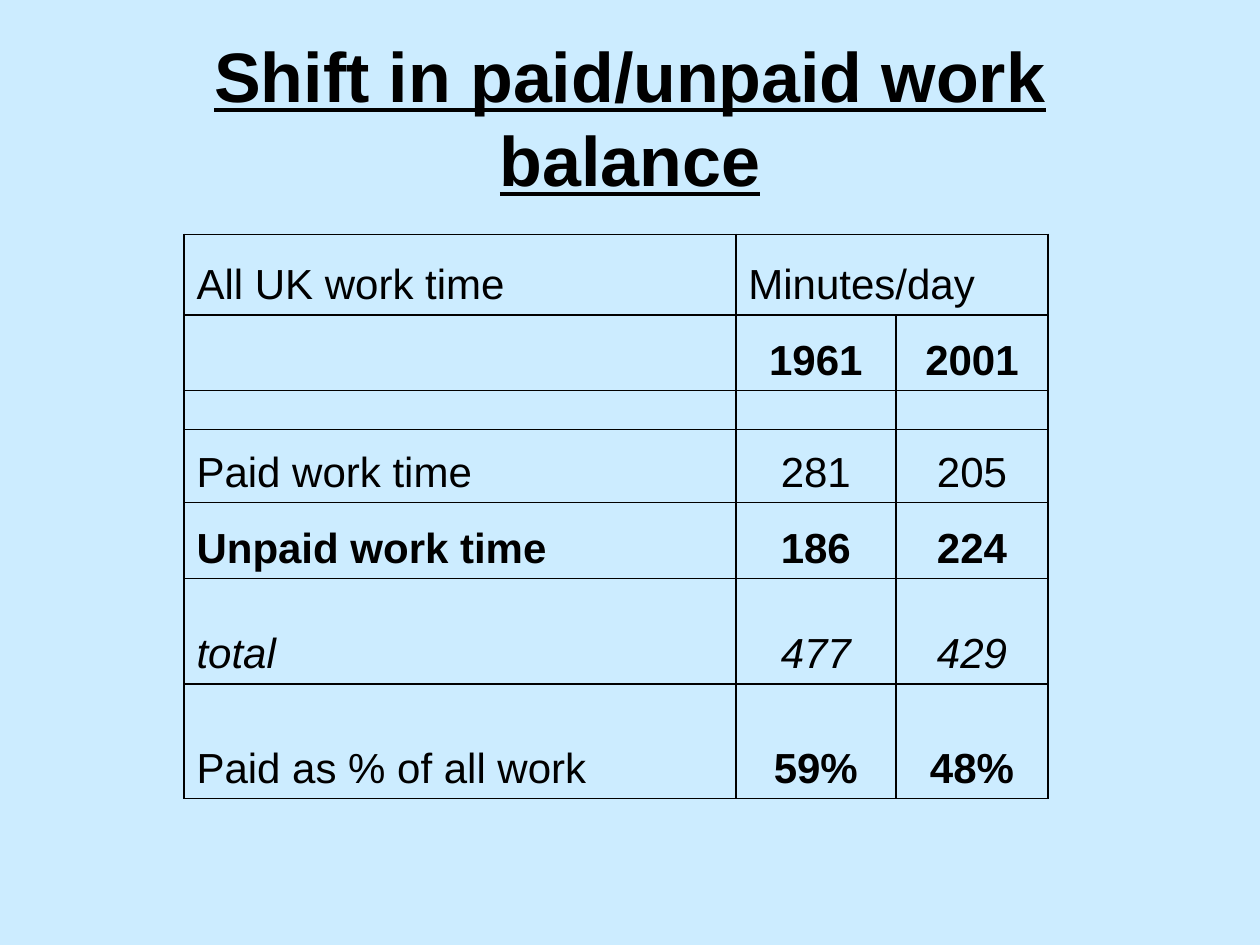
from lxml import etree
from pptx import Presentation
from pptx.dml.color import RGBColor
from pptx.enum.text import MSO_ANCHOR, PP_ALIGN
from pptx.oxml.ns import qn
from pptx.util import Inches, Pt

LEFT, CENTER = PP_ALIGN.LEFT, PP_ALIGN.CENTER
MIDDLE, BOTTOM = MSO_ANCHOR.MIDDLE, MSO_ANCHOR.BOTTOM
COLORS = {"background": "CCECFF", "ink": "000000"}
FONT = "Arial"
TITLE_ONLY = 5

COLUMN_WIDTHS = [4.38, 1.27, 1.21]
ROW_HEIGHTS = [0.64, 0.6, 0.31, 0.58, 0.6, 0.84, 0.91]
ROWS = [
    ["All UK work time", "Minutes/day", ""],
    ["", "1961", "2001"],
    ["", "", ""],
    ["Paid work time", "281", "205"],
    ["Unpaid work time", "186", "224"],
    ["total", "477", "429"],
    ["Paid as % of all work", "59%", "48%"],
]
YEAR_ROW, SPACER_ROW, UNPAID_ROW, TOTAL_ROW, SHARE_ROW = 1, 2, 4, 5, 6


def style_para(para, size, bold=False, italic=False, align=LEFT):
    para.alignment = align
    font = para.font
    font.name = FONT
    font.size = Pt(size)
    font.bold = bold
    font.italic = italic
    font.color.rgb = RGBColor.from_string(COLORS["ink"])


def add_borders(cell):
    properties = cell._tc.get_or_add_tcPr()
    for position, side in enumerate(("lnL", "lnR", "lnT", "lnB")):
        line = etree.Element(qn(f"a:{side}"), w=str(Pt(1)))
        fill = etree.SubElement(line, qn("a:solidFill"))
        etree.SubElement(fill, qn("a:srgbClr"), val=COLORS["ink"])
        properties.insert(position, line)


def place_title(page, left, top, width, height):
    title = page.shapes.title
    title.left, title.top = Inches(left), Inches(top)
    title.width, title.height = Inches(width), Inches(height)
    frame = title.text_frame
    frame.text = "Shift in paid/unpaid work balance"
    frame.word_wrap = True
    frame.vertical_anchor = MIDDLE
    para = frame.paragraphs[0]
    style_para(para, 40, bold=True, align=CENTER)
    para.font.underline = True


def place_table(page, left, top, width, height):
    table = page.shapes.add_table(
        len(ROWS), len(COLUMN_WIDTHS),
        Inches(left), Inches(top), Inches(width), Inches(height),
    ).table
    table.first_row = False
    table.horz_banding = False
    for column, column_width in zip(table.columns, COLUMN_WIDTHS):
        column.width = Inches(column_width)
    for row, row_height in zip(table.rows, ROW_HEIGHTS):
        row.height = Inches(row_height)
    for row_index, texts in enumerate(ROWS):
        for column_index, text in enumerate(texts):
            cell = table.cell(row_index, column_index)
            cell.fill.background()
            add_borders(cell)
            cell.vertical_anchor = BOTTOM
            if row_index == SPACER_ROW:
                cell.margin_top = cell.margin_bottom = 0
            if not text:
                continue
            cell.text = text
            is_value = row_index > 0 and column_index > 0
            bold = row_index in (YEAR_ROW, UNPAID_ROW) or (
                row_index == SHARE_ROW and is_value)
            style_para(cell.text_frame.paragraphs[0], 24, bold,
                       row_index == TOTAL_ROW, CENTER if is_value else LEFT)
    table.cell(0, 1).merge(table.cell(0, 2))


def main():
    deck = Presentation()
    deck.slide_width, deck.slide_height = Inches(10), Inches(7.5)
    page = deck.slides.add_slide(deck.slide_layouts[TITLE_ONLY])
    background = page.background.fill
    background.solid()
    background.fore_color.rgb = RGBColor.from_string(COLORS["background"])
    place_title(page, 0.5, 0.3, 9, 1.25)
    place_table(page, 1.46, 1.86, sum(COLUMN_WIDTHS), sum(ROW_HEIGHTS))
    deck.save("out.pptx")


if __name__ == "__main__":
    main()
